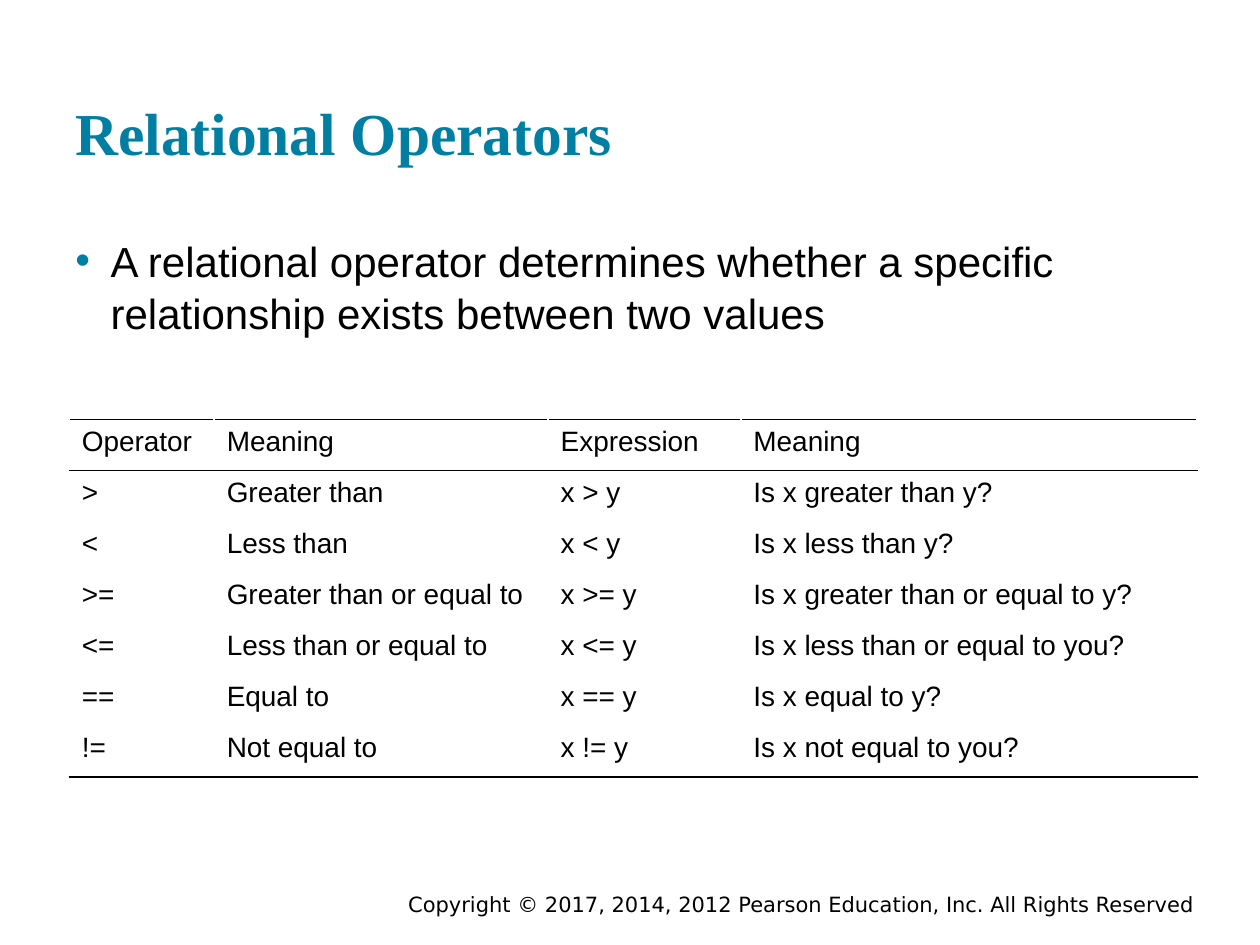
import pptx
import pptx.dml.color
import pptx.enum.text
import pptx.oxml
import pptx.oxml.ns
import pptx.util
from pptx.util import Inches

BLACK, WHITE, TEAL = "000000", "FFFFFF", "007FA3"


def set_font(paragraph, name, size, color, bold=False):
    font = paragraph.font
    font.name, font.size, font.bold = name, pptx.util.Pt(size), bold
    font.color.rgb = pptx.dml.color.RGBColor.from_string(color)


def add_element(parent, xml):
    """Append a DrawingML element, written without its namespace, to parent."""
    tag, rest = xml.split(" ", 1)
    element = pptx.oxml.parse_xml(f"{tag} {pptx.oxml.ns.nsdecls('a')} {rest}")
    parent.append(element)


presentation = pptx.Presentation()
presentation.slide_width, presentation.slide_height = Inches(10), Inches(7.5)
slide = presentation.slides.add_slide(presentation.slide_layouts[5])

# Title
title = slide.shapes.title
title.left, title.top, title.width, title.height = (
    Inches(0.5), Inches(0.66), Inches(9), Inches(0.77))
title_frame = title.text_frame
title_frame.text = "Relational Operators"
title_frame.vertical_anchor = pptx.enum.text.MSO_ANCHOR.BOTTOM
title_frame.paragraphs[0].alignment = pptx.enum.text.PP_ALIGN.LEFT
set_font(title_frame.paragraphs[0], "Times New Roman", 34, TEAL, bold=True)

# Definition
definition = slide.shapes.add_textbox(Inches(0.5), Inches(1.75), Inches(9), Inches(1.01))
definition_frame = definition.text_frame
definition_frame.word_wrap = True
for frame in (title_frame, definition_frame):
    frame.margin_left = frame.margin_right = Inches(0.1)
    frame.margin_top = frame.margin_bottom = Inches(0.1)
definition_frame.text = ("A relational operator determines whether a specific "
                         "relationship exists between two values")
paragraph = definition_frame.paragraphs[0]
paragraph.line_spacing = 1.04
properties = paragraph._p.get_or_add_pPr()
properties.set("marL", str(Inches(0.28)))
properties.set("indent", str(Inches(-0.28)))
add_element(properties, f'<a:buClr ><a:srgbClr val="{TEAL}"/></a:buClr>')
add_element(properties, '<a:buFont typeface="Arial"/>')
add_element(properties, '<a:buChar char="•"/>')
set_font(paragraph, "Arial", 24, BLACK)

# Operator table
rows = [
    ("Operator", "Meaning", "Expression", "Meaning"),
    (">", "Greater than", "x > y", "Is x greater than y?"),
    ("<", "Less than", "x < y", "Is x less than y?"),
    (">=", "Greater than or equal to", "x >= y", "Is x greater than or equal to y?"),
    ("<=", "Less than or equal to", "x <= y", "Is x less than or equal to you?"),
    ("==", "Equal to", "x == y", "Is x equal to y?"),
    ("!=", "Not equal to", "x != y", "Is x not equal to you?"),
]
column_widths = (1.15, 2.65, 1.53, 3.62)
table = slide.shapes.add_table(len(rows), len(column_widths), Inches(0.55), Inches(3.33),
                               Inches(8.95), Inches(2.84)).table
table.horz_banding = False
for column, width in zip(table.columns, column_widths):
    column.width = Inches(width)

last_row = len(rows) - 1
for row_index, row in enumerate(rows):
    borders = {
        "lnL": WHITE,
        "lnR": WHITE,
        "lnT": BLACK if row_index in (0, 1) else WHITE,
        "lnB": BLACK if row_index in (0, last_row) else WHITE,
    }
    for column_index, text in enumerate(row):
        cell = table.cell(row_index, column_index)
        cell.text = text
        set_font(cell.text_frame.paragraphs[0], "Arial", 16, BLACK)
        cell_properties = cell._tc.get_or_add_tcPr()
        for side, color in borders.items():
            add_element(cell_properties, f'<a:{side} w="12700"><a:solidFill><a:srgbClr '
                                         f'val="{color}"/></a:solidFill></a:{side}>')
        cell.fill.solid()
        cell.fill.fore_color.rgb = pptx.dml.color.RGBColor.from_string(WHITE)

# Copyright line
footer = slide.shapes.add_textbox(Inches(2.92), Inches(7.05), Inches(6.66), Inches(0.25))
footer_frame = footer.text_frame
footer_frame.word_wrap = True
footer_frame.vertical_anchor = pptx.enum.text.MSO_ANCHOR.MIDDLE
footer_frame.text = "Copyright © 2017, 2014, 2012 Pearson Education, Inc. All Rights Reserved"
footer_frame.paragraphs[0].alignment = pptx.enum.text.PP_ALIGN.RIGHT
set_font(footer_frame.paragraphs[0], "DejaVu Sans", 12, BLACK)

presentation.save("out.pptx")
